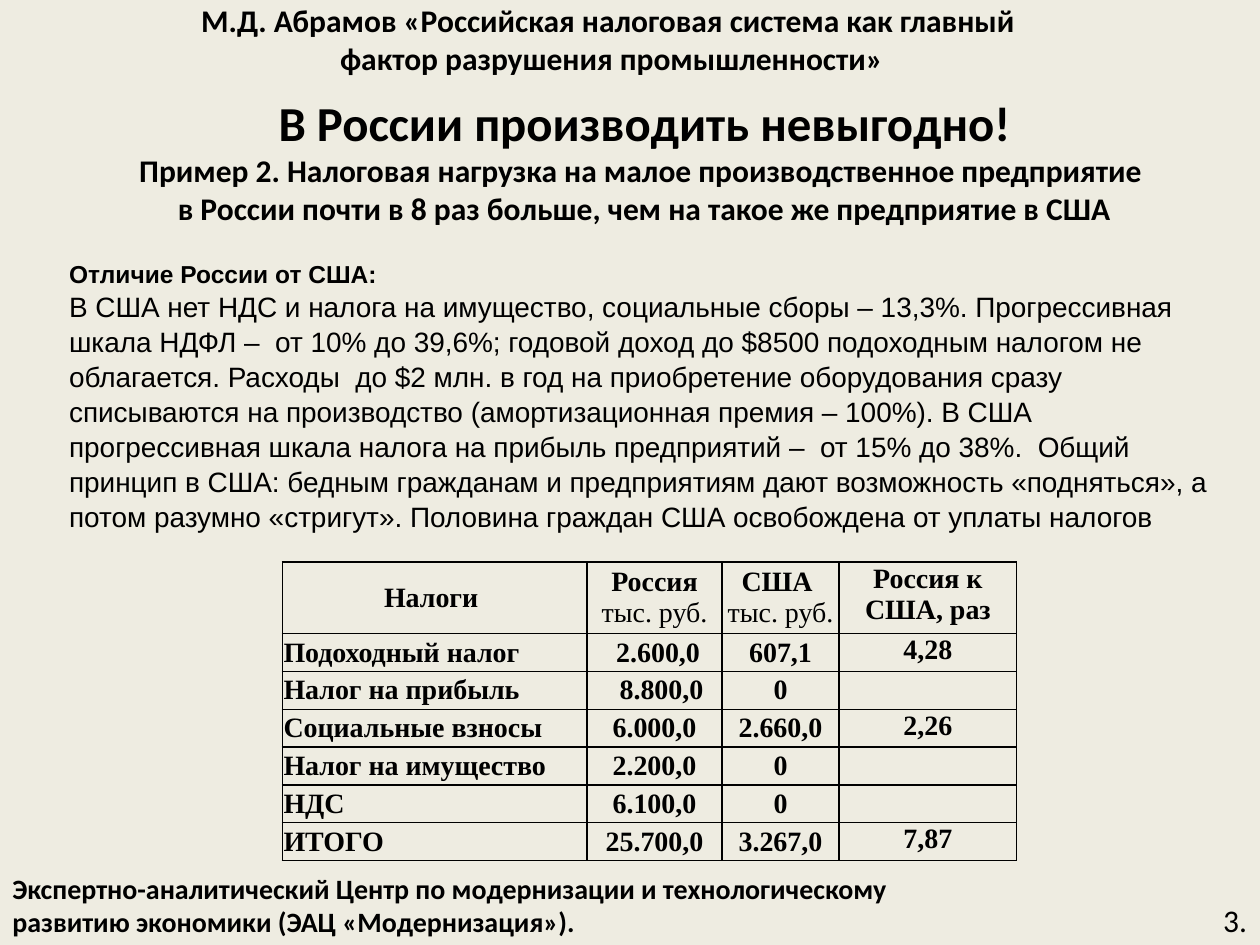
import pptx
import pptx.util
import pptx.dml.color
import pptx.enum.text
import pptx.oxml.ns
from lxml import etree

Inches = pptx.util.Inches
Pt = pptx.util.Pt
qn = pptx.oxml.ns.qn
PP_ALIGN = pptx.enum.text.PP_ALIGN
MSO_ANCHOR = pptx.enum.text.MSO_ANCHOR

HEADER = ["М.Д. Абрамов «Российская налоговая система как главный ",
          "фактор разрушения промышленности»"]
TITLE = "В России производить невыгодно!"
SUBTITLE = ["Пример 2. Налоговая нагрузка на малое производственное предприятие ",
            "в России почти в 8 раз больше, чем на такое же предприятие в США"]
BODY_HEADING = "Отличие России от США:"
BODY = ("В США нет НДС и налога на имущество, социальные сборы – 13,3%. "
        "Прогрессивная шкала НДФЛ –  от 10% до 39,6%; годовой доход до $8500 "
        "подоходным налогом не облагается. Расходы  до $2 млн. в год на "
        "приобретение оборудования сразу списываются на производство "
        "(амортизационная премия – 100%). В США прогрессивная шкала налога на "
        "прибыль предприятий –  от 15% до 38%.  Общий принцип в США: бедным "
        "гражданам и предприятиям дают возможность «подняться», а потом разумно "
        "«стригут». Половина граждан США освобождена от уплаты налогов")
FOOTER = ["Экспертно-аналитический Центр по модернизации и технологическому",
          "развитию экономики (ЭАЦ «Модернизация»)."]
TAXES = [
    ["Налоги ", "Россия\nтыс. руб.", "США \nтыс. руб.", "Россия к США, раз"],
    ["Подоходный налог", " 2.600,0", "607,1", "4,28"],
    ["Налог на прибыль", "  8.800,0", "0", ""],
    ["Социальные взносы", "6.000,0", "2.660,0", "2,26"],
    ["Налог на имущество", "2.200,0", "0", ""],
    ["НДС", "6.100,0", "0", ""],
    ["ИТОГО", "25.700,0", "3.267,0", "7,87"],
]
COLUMN_WIDTHS = [2.42, 1.07, 0.93, 1.41]


def color(value):
    return pptx.dml.color.RGBColor.from_string(value)


def style(p, font, size, bold, align):
    p.alignment = align
    for r in p.runs:
        r.font.name = font
        r.font.size = Pt(size)
        r.font.bold = bold
        r.font.color.rgb = color("000000")


def add_text(s, box, lines, font, align=PP_ALIGN.LEFT, wrap=True, spacing=None):
    tf = s.shapes.add_textbox(*map(Inches, box)).text_frame
    tf.word_wrap = wrap
    tf.vertical_anchor = MSO_ANCHOR.MIDDLE
    for i, (text, size, bold) in enumerate(lines):
        p = tf.add_paragraph() if i else tf.paragraphs[0]
        p.text = text
        p.line_spacing = spacing
        style(p, font, size, bold, align)


def add_header(s, box):
    add_text(s, box, [(t, 18, True) for t in HEADER], "Calibri", PP_ALIGN.CENTER)


def add_title(s, box):
    lines = [(TITLE, 27.9, True)] + [(t, 18, True) for t in SUBTITLE]
    add_text(s, box, lines, "Calibri", PP_ALIGN.CENTER)


def add_body(s, box):
    add_text(s, box, [(BODY_HEADING, 14, True), (BODY, 16, False)], "Arial", spacing=1.04)


def add_footer(s, box):
    add_text(s, box, [(t, 16, True) for t in FOOTER], "Calibri", wrap=False)


def add_page_number(s, box):
    add_text(s, box, [("3.", 18, False)], "Calibri", wrap=False)


def add_borders(cell):
    tc_pr = cell._tc.get_or_add_tcPr()
    for i, side in enumerate(("lnL", "lnR", "lnT", "lnB")):
        ln = etree.Element(qn("a:" + side), w=str(Pt(1)))
        fill = etree.SubElement(ln, qn("a:solidFill"))
        etree.SubElement(fill, qn("a:srgbClr"), val="000000")
        tc_pr.insert(i, ln)


def fill_cell(cell, text, row, col):
    cell.fill.background()
    add_borders(cell)
    cell.margin_left = cell.margin_right = Inches(0.01)
    cell.margin_top = cell.margin_bottom = Inches(0.01)
    cell.vertical_anchor = MSO_ANCHOR.TOP if col == 3 else MSO_ANCHOR.MIDDLE
    align = PP_ALIGN.LEFT if row and col == 0 else PP_ALIGN.CENTER
    cell.text_frame.text = text
    for i, p in enumerate(cell.text_frame.paragraphs):
        style(p, "Times New Roman", 16, i == 0, align)
        if not text:
            etree.SubElement(p._p, qn("a:endParaRPr"), sz="1600")


def add_tax_table(s, box):
    frame = s.shapes.add_table(len(TAXES), len(COLUMN_WIDTHS), *map(Inches, box))
    table = frame.table
    table.first_row = table.horz_banding = False
    for column, width in zip(table.columns, COLUMN_WIDTHS):
        column.width = Inches(width)
    for r, values in enumerate(TAXES):
        table.rows[r].height = Inches(0.3 if r else 0.57)
        for c, text in enumerate(values):
            fill_cell(table.cell(r, c), text, r, c)


def main():
    prs = pptx.Presentation()
    prs.slide_width, prs.slide_height = Inches(10), Inches(7.5)
    s = prs.slides.add_slide(prs.slide_layouts[6])
    s.background.fill.solid()
    s.background.fill.fore_color.rgb = color("EEECE1")
    add_title(s, (0.43, 0.73, 9.37, 1.08))
    add_tax_table(s, (2.24, 4.46, 5.83, 2.37))
    add_body(s, (0.45, 2.09, 9.42, 2.1))
    add_page_number(s, (9.61, 7.1, 0.39, 0.4))
    add_header(s, (0.01, -0.03, 9.69, 0.68))
    add_footer(s, (0, 6.86, 7.27, 0.64))
    prs.save("out.pptx")


if __name__ == "__main__":
    main()
